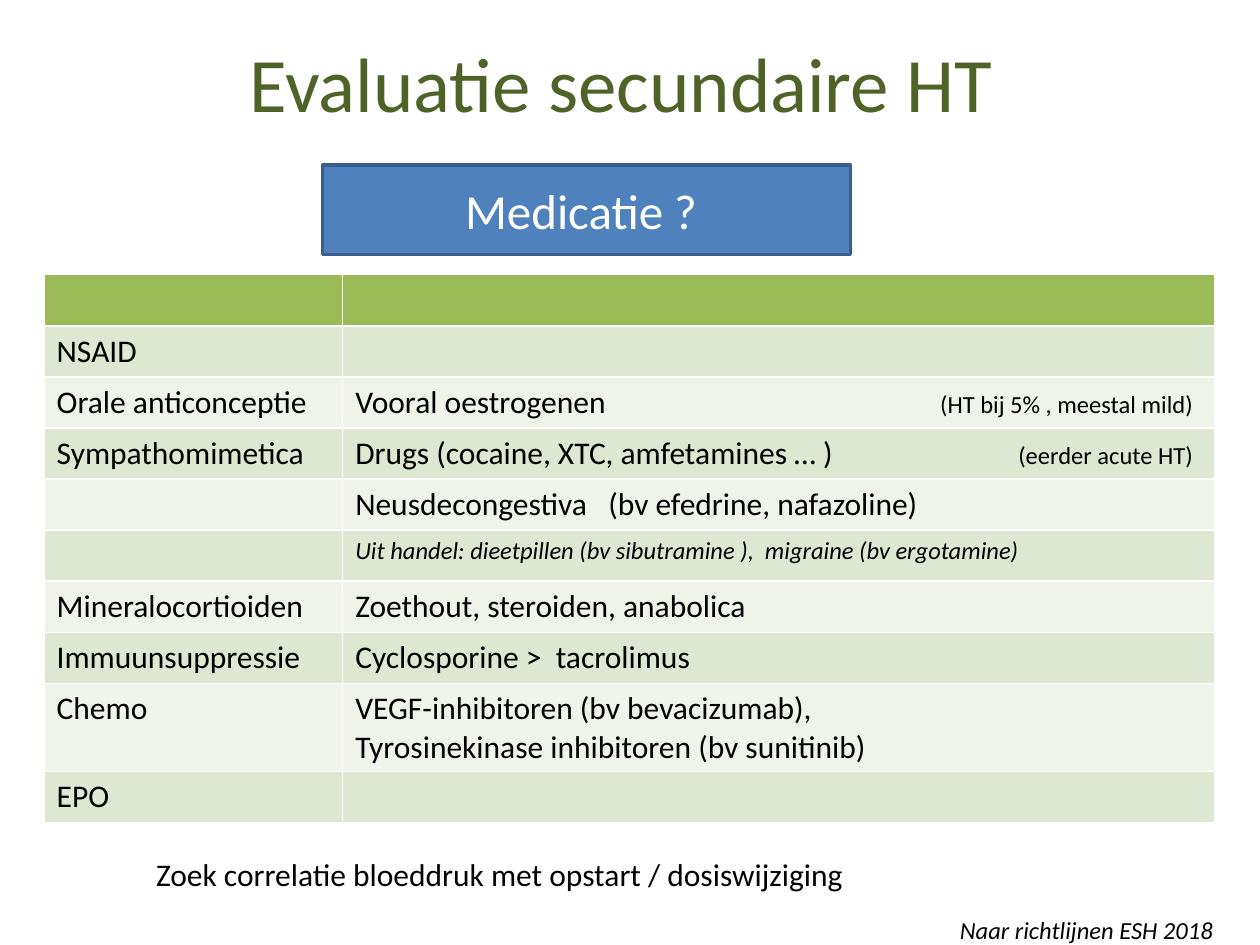
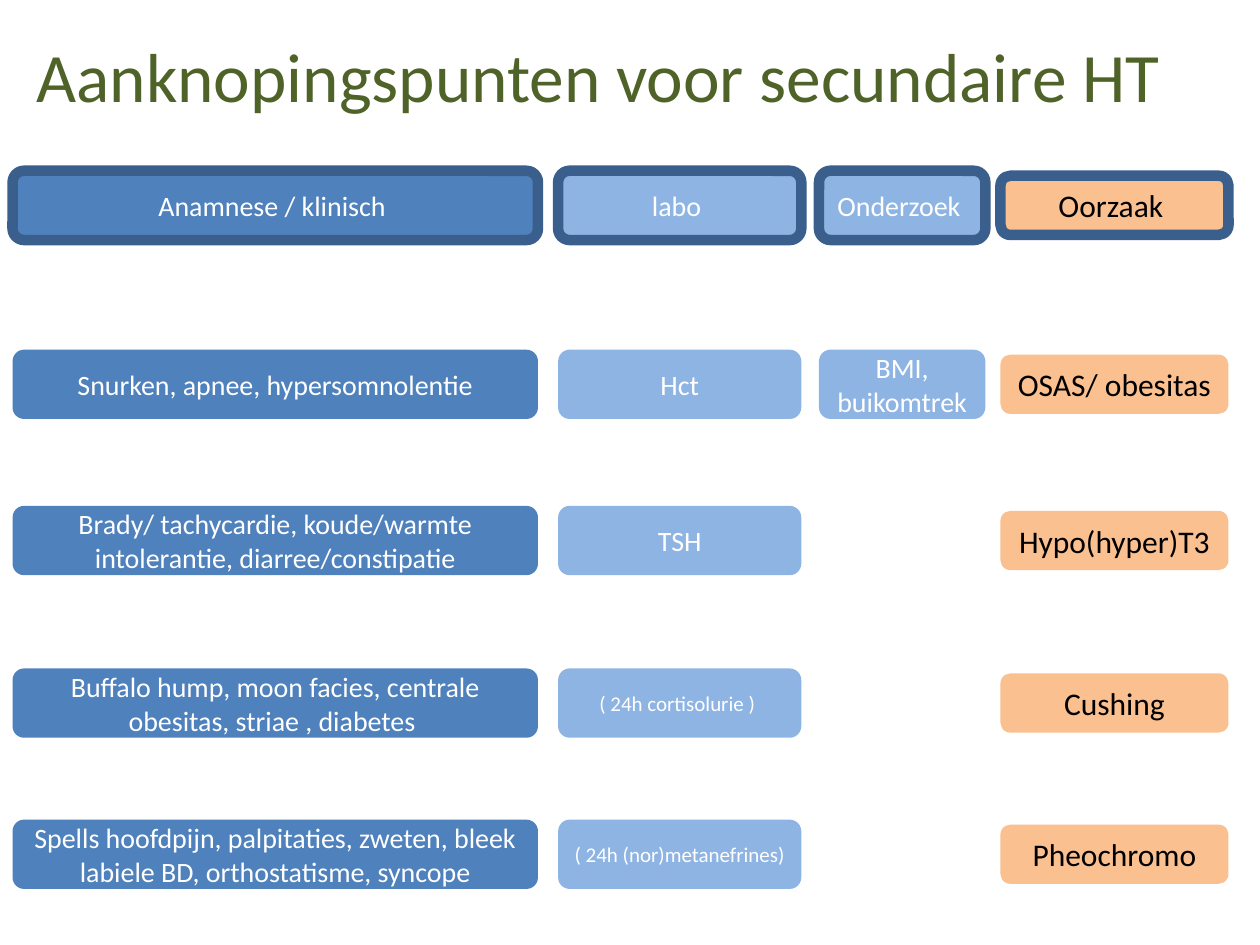
from lxml import etree
from pptx import Presentation
from pptx import util as u
from pptx.dml.color import RGBColor
from pptx.enum import shapes, text
from pptx.oxml.ns import qn

FONT = "Calibri"
BLACK, WHITE = "000000", "FFFFFF"
OLIVE, GREEN, PALE, PALER = "4F6228", "9BBB59", "DEE7D1", "EFF3EA"
BLUE, SKY, PEACH, EDGE = "4F81BD", "8EB4E3", "FAC090", "3A5F8C"
LEFT, CENTER = text.PP_ALIGN.LEFT, text.PP_ALIGN.CENTER

MEDICATION_TITLE = ("Evaluatie secundaire HT", (0.43, 0.14, 9, 1.01), 44)
MEDICATION_BANNER = ("Medicatie ? ", (2.56, 1.31, 4.19, 0.71), 28)
ADVICE = ("Zoek correlatie bloeddruk met opstart / dosiswijziging", (1.14, 6.74, 6.1, 0.4), 18)
SOURCE = ("Naar richtlijnen ESH 2018", (7.52, 7.21, 2.51, 0.34), 14)
WITHDRAWN = "Uit handel: dieetpillen (bv sibutramine ),  migraine (bv ergotamine)"
MEDICATIONS = [
    ("", "", ""),
    ("NSAID", "", ""),
    ("Orale anticonceptie", "Vooral oestrogenen", "(HT bij 5% , meestal mild)"),
    ("Sympathomimetica", "Drugs (cocaine, XTC, amfetamines … )", "(eerder acute HT)"),
    ("", "Neusdecongestiva   (bv efedrine, nafazoline)", ""),
    ("", WITHDRAWN, ""),
    ("Mineralocortioiden", "Zoethout, steroiden, anabolica", ""),
    ("Immuunsuppressie", "Cyclosporine >  tacrolimus", ""),
    ("Chemo", "VEGF-inhibitoren (bv bevacizumab),\nTyrosinekinase inhibitoren (bv sunitinib)", ""),
    ("EPO", "", ""),
]
TABLE_LEFT, TABLE_TOP, TABLE_HEIGHT = 0.35, 2.18, 4.35
TABLE_COLUMNS = (2.37, 6.92)
TWO_LINE_ROW = 0.7
NOTE_TAB = 6.65

CLUES_TITLE = ("Aanknopingspunten voor secundaire HT ", (0.11, 0.29, 9.4, 0.61), 39.6)
CLUE_COLUMNS = [
    (0.1, 4.17, 0.55, BLUE, WHITE, 16),
    (4.43, 1.93, 0.55, SKY, WHITE, 16),
    (6.5, 1.32, 0.55, SKY, WHITE, 16),
    (7.94, 1.81, 0.47, PEACH, BLACK, 18),
]
CLUE_ROWS = [
    (1.63, ("Anamnese / klinisch ", "labo ", "Onderzoek ", "Oorzaak ")),
    (3.05, ("Snurken, apnee, hypersomnolentie", "Hct", "BMI, buikomtrek", "OSAS/ obesitas")),
    (4.29, ("Brady/ tachycardie, koude/warmte intolerantie, diarree/constipatie",
            "TSH", "", "Hypo(hyper)T3")),
    (5.58, ("Buffalo hump, moon facies, centrale obesitas, striae , diabetes ",
            "( 24h cortisolurie ) ", "", "Cushing")),
    (6.78, ("Spells hoofdpijn, palpitaties, zweten, bleek labiele BD, orthostatisme, syncope",
            "( 24h (nor)metanefrines) ", "", "Pheochromo")),
]
BRACKETED_SIZE = 12


def color(hex_code):
    return RGBColor.from_string(hex_code)


def inches(place):
    return [u.Inches(length) for length in place]


def style(frame, size, ink, align=LEFT, italic=False):
    for paragraph in frame.paragraphs:
        paragraph.alignment = align
        font = paragraph.font
        font.name, font.size, font.italic = FONT, u.Pt(size), italic
        font.color.rgb = color(ink)


def add_text(slide, content, place, size, ink=BLACK, align=LEFT, italic=False,
             anchor=text.MSO_ANCHOR.TOP):
    frame = slide.shapes.add_textbox(*inches(place)).text_frame
    frame.word_wrap = True
    frame.vertical_anchor = anchor
    frame.text = content
    style(frame, size, ink, align, italic)


def add_title(slide, content, place, size):
    add_text(slide, content, place, size, OLIVE, CENTER, anchor=text.MSO_ANCHOR.MIDDLE)


def add_box(slide, kind, content, place, size, fill, ink, edge_width):
    box = slide.shapes.add_shape(kind, *inches(place))
    box.shadow.inherit = False
    box.fill.solid()
    box.fill.fore_color.rgb = color(fill)
    if edge_width:
        box.line.color.rgb = color(EDGE)
        box.line.width = u.Pt(edge_width)
    else:
        box.line.fill.background()
    frame = box.text_frame
    frame.word_wrap = True
    frame.vertical_anchor = text.MSO_ANCHOR.MIDDLE
    frame.text = content
    style(frame, size, ink, CENTER)


def fill_cell(cell, content, fill, size=18, italic=False):
    cell.text = content
    style(cell.text_frame, size, BLACK, italic=italic)
    properties = cell._tc.get_or_add_tcPr()
    for side in ("a:lnL", "a:lnR", "a:lnT", "a:lnB"):
        border = etree.SubElement(properties, qn(side), w=str(u.Pt(1)))
        ink = etree.SubElement(border, qn("a:solidFill"))
        etree.SubElement(ink, qn("a:srgbClr"), val=WHITE)
    cell.fill.solid()
    cell.fill.fore_color.rgb = color(fill)


def add_note(cell, note):
    paragraph = cell.text_frame.paragraphs[0]
    tabs = etree.Element(qn("a:tabLst"))
    etree.SubElement(tabs, qn("a:tab"), pos=str(u.Inches(NOTE_TAB)), algn="r")
    paragraph._p.get_or_add_pPr().insert(0, tabs)
    run = paragraph.add_run()
    run.text = "\t" + note
    run.font.size = u.Pt(14)


def add_medication_table(slide):
    place = (TABLE_LEFT, TABLE_TOP, sum(TABLE_COLUMNS), TABLE_HEIGHT)
    table = slide.shapes.add_table(len(MEDICATIONS), len(TABLE_COLUMNS), *inches(place)).table
    for column, width in zip(table.columns, TABLE_COLUMNS):
        column.width = u.Inches(width)
    one_line_row = (TABLE_HEIGHT - TWO_LINE_ROW) / (len(MEDICATIONS) - 1)
    for index, (group, examples, note) in enumerate(MEDICATIONS):
        table.rows[index].height = u.Inches(TWO_LINE_ROW if "\n" in examples else one_line_row)
        fill = GREEN if index == 0 else (PALER, PALE)[index % 2]
        withdrawn = examples == WITHDRAWN
        fill_cell(table.cell(index, 0), group, fill)
        fill_cell(table.cell(index, 1), examples, fill, 14 if withdrawn else 18, withdrawn)
        if note:
            add_note(table.cell(index, 1), note)


def build_medication(slide):
    add_title(slide, *MEDICATION_TITLE)
    add_box(slide, shapes.MSO_SHAPE.RECTANGLE, *MEDICATION_BANNER, BLUE, WHITE, 2)
    add_text(slide, *SOURCE, italic=True)
    add_medication_table(slide)
    add_text(slide, *ADVICE)


def build_clues(slide):
    add_title(slide, *CLUES_TITLE)
    for index, (middle, clues) in enumerate(CLUE_ROWS):
        for clue, (left, width, height, fill, ink, size) in zip(clues, CLUE_COLUMNS):
            if clue:
                place = (left, middle - height / 2, width, height)
                add_box(slide, shapes.MSO_SHAPE.ROUNDED_RECTANGLE, clue, place,
                        BRACKETED_SIZE if clue.startswith("(") else size,
                        fill, ink, 6 if index == 0 else 0)


def main():
    deck = Presentation()
    deck.slide_width, deck.slide_height = u.Inches(10), u.Inches(7.5)
    for build in (build_medication, build_clues):
        build(deck.slides.add_slide(deck.slide_layouts[6]))
    deck.save("out.pptx")


if __name__ == "__main__":
    main()
